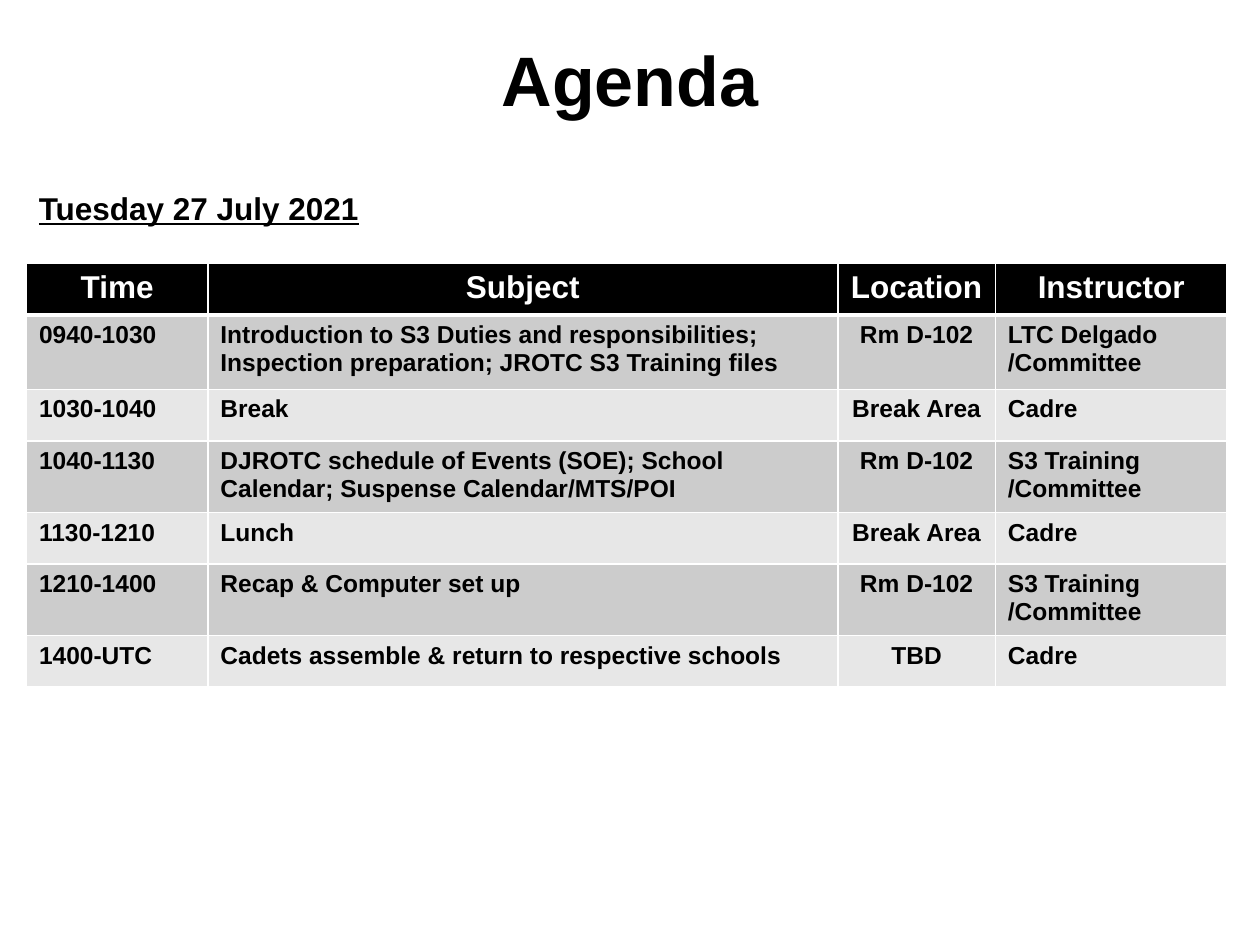
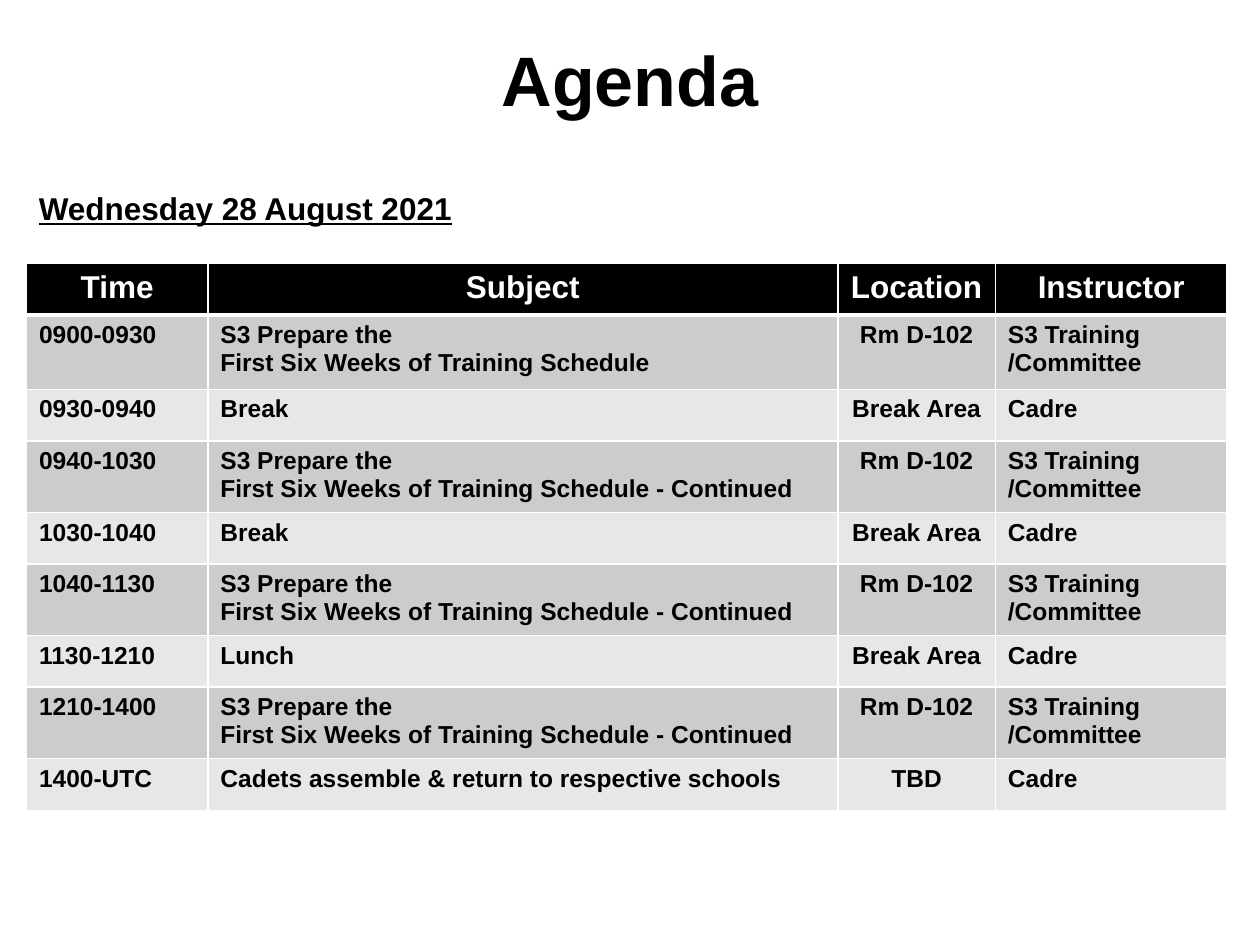
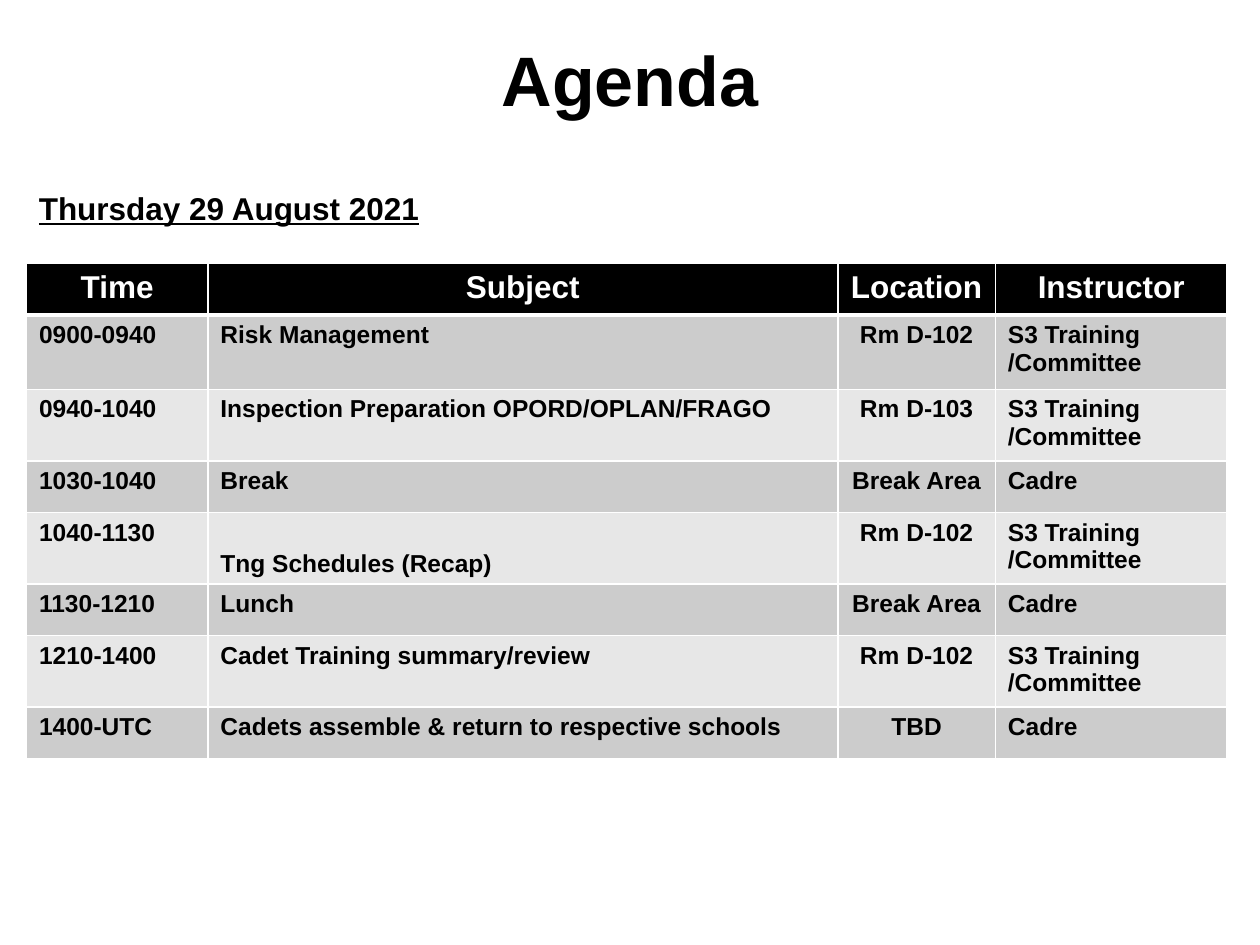
from lxml.etree import fromstring
from pptx import Presentation
from pptx.dml.color import RGBColor
from pptx.enum.text import MSO_ANCHOR, MSO_AUTO_SIZE, PP_ALIGN
from pptx.oxml.ns import nsdecls
from pptx.util import Inches, Pt

HEADER = ("Time", "Subject", "Location", "Instructor")
ROOM, BREAK_AREA = "Rm D-102", "Break Area"
COMMITTEE = "S3 Training\n/Committee"
SIX_WEEKS = "S3 Prepare the\nFirst Six Weeks of Training Schedule"
SIX_WEEKS_MORE = f"{SIX_WEEKS} - Continued"
MORNING_BREAK = ("1030-1040", "Break", BREAK_AREA, "Cadre")
LUNCH = ("1130-1210", "Lunch", BREAK_AREA, "Cadre")
RETURN = ("1400-UTC", "Cadets assemble & return to respective schools", "TBD", "Cadre")
RECAP = "Tng Schedules (Recap)"

DAYS = [
    ("Tuesday 27 July 2021", 27.6, [
        ("0940-1030", "Introduction to S3 Duties and responsibilities; "
         "Inspection preparation; JROTC S3 Training files", ROOM, "LTC Delgado\n/Committee"),
        MORNING_BREAK,
        ("1040-1130", "DJROTC schedule of Events (SOE); School Calendar; "
         "Suspense Calendar/MTS/POI", ROOM, COMMITTEE),
        LUNCH,
        ("1210-1400", "Recap & Computer set up", ROOM, COMMITTEE),
        RETURN,
    ]),
    ("Wednesday 28 August 2021", 35.1, [
        ("0900-0930", SIX_WEEKS, ROOM, COMMITTEE),
        ("0930-0940", "Break", BREAK_AREA, "Cadre"),
        ("0940-1030", SIX_WEEKS_MORE, ROOM, COMMITTEE),
        MORNING_BREAK,
        ("1040-1130", SIX_WEEKS_MORE, ROOM, COMMITTEE),
        LUNCH,
        ("1210-1400", SIX_WEEKS_MORE, ROOM, COMMITTEE),
        RETURN,
    ]),
    ("Thursday 29 August 2021", 32.5, [
        ("0900-0940", "Risk Management", ROOM, COMMITTEE),
        ("0940-1040", "Inspection Preparation OPORD/OPLAN/FRAGO", "Rm D-103", COMMITTEE),
        MORNING_BREAK,
        ("1040-1130", RECAP, ROOM, COMMITTEE),
        LUNCH,
        ("1210-1400", "Cadet Training summary/review", ROOM, COMMITTEE),
        RETURN,
    ]),
]


def rgb(value):
    return RGBColor.from_string(value)


class Deck:
    """Agenda style on a grid of 100 columns by 75 rows, with the current slide."""

    FONT, INK, PAPER = "Arial", "000000", "FFFFFF"
    BANDS = ("CCCCCC", "E7E7E7")
    LEFT, TABLE_TOP = 2.1, 20.9
    COLS = (14.4, 50, 12.5, 18.4)
    ROW, FIRST_ROW = 4.1, 5.9

    def __init__(self):
        self.prs = Presentation()
        self.prs.slide_width, self.prs.slide_height = Inches(10), Inches(7.5)
        self.unit = self.prs.slide_width / 100

    def grid(self, *cells):
        return [round(c * self.unit) for c in cells]

    def add_slide(self):
        self.s = self.prs.slides.add_slide(self.prs.slide_layouts[6])

    def set_text(self, tf, text, size, color=INK, align=PP_ALIGN.LEFT, underline=None):
        tf.text = text
        for p in tf.paragraphs:
            p.alignment = align
            p.font.name, p.font.size, p.font.bold = self.FONT, Pt(size), True
            p.font.underline = underline
            p.font.color.rgb = rgb(color)

    def title(self, text):
        tf = self.s.shapes.add_textbox(*self.grid(5, 0, 90, 12.5)).text_frame
        tf.word_wrap = True
        tf.vertical_anchor = MSO_ANCHOR.MIDDLE
        self.set_text(tf, text, 40, align=PP_ALIGN.CENTER)

    def date(self, text, width):
        tf = self.s.shapes.add_textbox(*self.grid(self.LEFT, 14.5, width, 4)).text_frame
        tf.word_wrap = False
        tf.auto_size = MSO_AUTO_SIZE.SHAPE_TO_FIT_TEXT
        self.set_text(tf, text, 18, underline=True)

    def borders(self, cell, top, bottom):
        sides = {"L": 1, "R": 1, "T": top, "B": bottom}
        for i, (side, width) in enumerate(sides.items()):
            cell._tc.get_or_add_tcPr().insert(i, fromstring(
                f'<a:ln{side} {nsdecls("a")} w="{Pt(width)}"><a:solidFill>'
                f'<a:srgbClr val="{self.PAPER}"/></a:solidFill></a:ln{side}>'))

    def table(self, rows):
        heights = [self.ROW, self.FIRST_ROW] + [self.ROW] * (len(rows) - 1)
        box = self.grid(self.LEFT, self.TABLE_TOP, sum(self.COLS), sum(heights))
        tbl = self.s.shapes.add_table(len(heights), len(self.COLS), *box).table
        tbl.horz_banding = False
        for col, width in zip(tbl.columns, self.grid(*self.COLS)):
            col.width = width
        for row, height in zip(tbl.rows, self.grid(*heights)):
            row.height = height
        for i, texts in enumerate([HEADER, *rows]):
            for j, text in enumerate(texts):
                self.cell(tbl.cell(i, j), text, i, j)

    def cell(self, cell, text, i, j):
        head = i == 0
        cell.fill.solid()
        cell.fill.fore_color.rgb = rgb(self.INK if head else self.BANDS[(i - 1) % 2])
        centred = head or HEADER[j] == "Location"
        self.set_text(cell.text_frame, text, 18 if head else 14,
                      self.PAPER if head else self.INK,
                      PP_ALIGN.CENTER if centred else PP_ALIGN.LEFT)
        if text == RECAP:
            cell.vertical_anchor = MSO_ANCHOR.BOTTOM
        self.borders(cell, 3 if i == 1 else 1, 3 if head else 1)


def main():
    deck = Deck()
    for day, width, rows in DAYS:
        deck.add_slide()
        deck.title("Agenda")
        deck.table(rows)
        deck.date(day, width)
    deck.prs.save("out.pptx")


if __name__ == "__main__":
    main()
